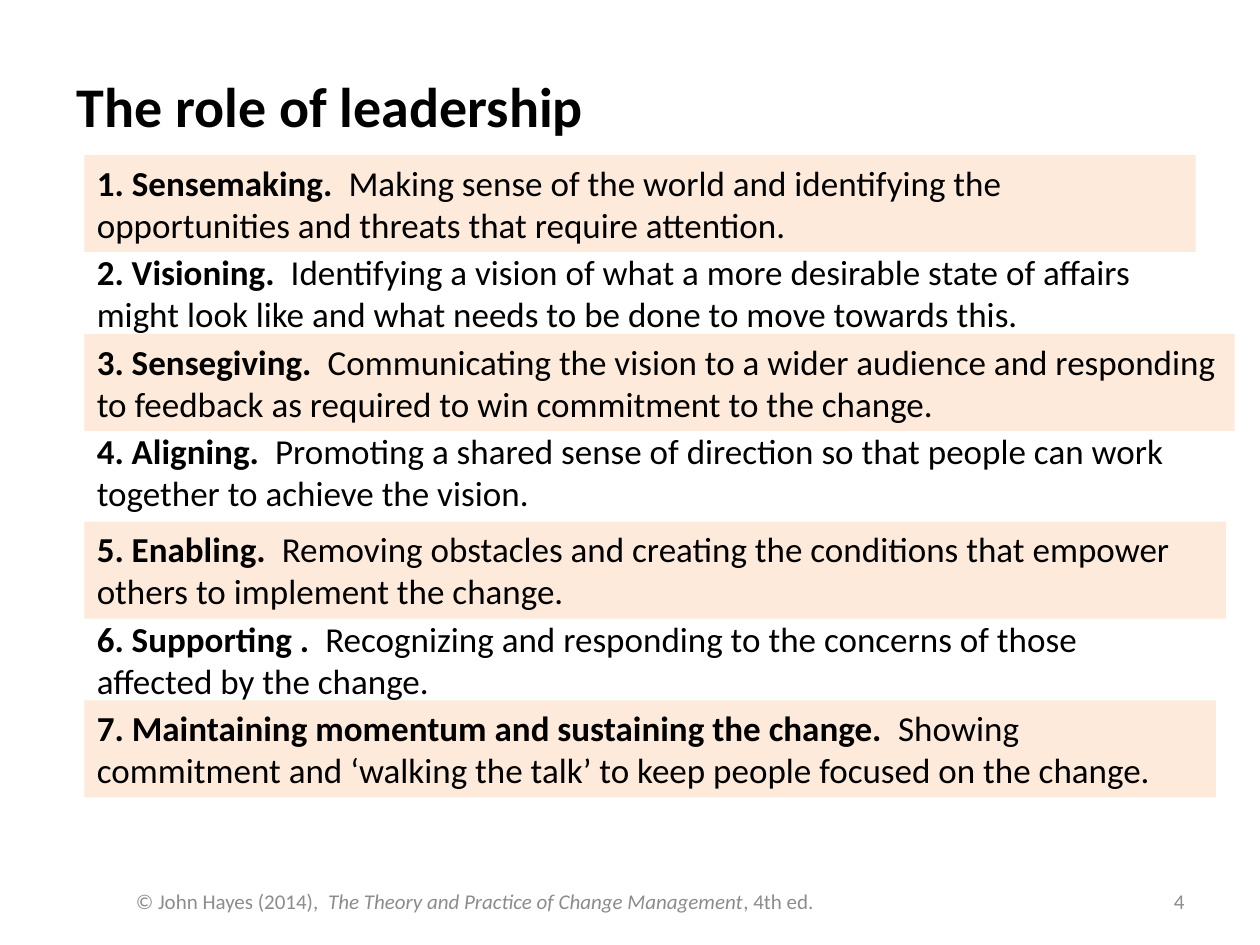
from dataclasses import dataclass

from pptx import Presentation
from pptx.dml.color import RGBColor as Rgb
from pptx.enum.text import MSO_ANCHOR as Anchor, MSO_AUTO_SIZE as AutoSize, PP_ALIGN as Align
from pptx.util import Inches, Pt


@dataclass(frozen=True)
class Theme:
    font: str = "Calibri"
    ink: Rgb = Rgb(0x00, 0x00, 0x00)
    muted: Rgb = Rgb(0x8C, 0x8C, 0x8C)
    band: Rgb = Rgb(0xFD, 0xEA, 0xDA)
    title_size: int = 32
    body_size: int = 20
    footer_size: int = 12


@dataclass(frozen=True)
class Area:
    left: float
    top: float
    width: float
    height: float

    def lengths(self) -> tuple:
        return tuple(Inches(n) for n in (self.left, self.top, self.width, self.height))


@dataclass(frozen=True)
class Span:
    text: str
    bold: bool = False
    italic: bool = False


@dataclass(frozen=True)
class Role:
    name: str
    summary: str
    width: float


THEME = Theme()
ROLE_LEFT, ROLE_TOP, ROLE_HEIGHT = 0.67, 1.23, 0.77
ROLE_STEP = 0.71
GROUP_SIZE, GROUP_GAP = 4, 0.07  # a little extra space after the fourth role
FOOTER_TOP, FOOTER_HEIGHT = 6.95, 0.4

ROLES = [
    Role("Sensemaking.", "Making sense of the world and identifying the opportunities "
         "and threats that require attention.", 8.82),
    Role("Visioning.", "Identifying a vision of what a more desirable state of affairs "
         "might look like and what needs to be done to move towards this.", 8.9),
    Role("Sensegiving.", "Communicating the vision to a wider audience and responding "
         "to feedback as required to win commitment to the change.", 9.13),
    Role("Aligning.", "Promoting a shared sense of direction so that people can work "
         "together to achieve the vision.", 9.06),
    Role("Enabling.", "Removing obstacles and creating the conditions that empower "
         "others to implement the change.", 9.06),
    Role("Supporting .", "Recognizing and responding to the concerns of those "
         "affected by the change.", 8.9),
    Role("Maintaining momentum and sustaining the change.", "Showing commitment and "
         "‘walking the talk’ to keep people focused on the change.", 8.98),
]


def set_attributes(target, values: dict) -> None:
    for name, value in values.items():
        setattr(target, name, value)


def write_text(box, spans: list[Span], size: int, color: Rgb,
               align: Align = Align.LEFT, anchor: Anchor = Anchor.TOP) -> None:
    frame = box.text_frame
    set_attributes(frame, {"word_wrap": True, "auto_size": AutoSize.NONE,
                           "vertical_anchor": anchor})
    para = frame.paragraphs[0]
    para.alignment = align
    for span in spans:
        run = para.add_run()
        run.text = span.text
        set_attributes(run.font, {"name": THEME.font, "size": Pt(size),
                                  "bold": span.bold, "italic": span.italic})
        run.font.color.rgb = color


def add_title(page, text: str) -> None:
    title = page.shapes.title
    left, top, width, height = Area(0.51, 0.52, 9.29, 0.64).lengths()
    set_attributes(title, {"left": left, "top": top, "width": width, "height": height})
    write_text(title, [Span(text, bold=True)], THEME.title_size, THEME.ink)


def add_role(page, index: int, role: Role) -> None:
    """Place one numbered role; every other one stands on a coloured band."""
    top = ROLE_TOP + index * ROLE_STEP + index // GROUP_SIZE * GROUP_GAP
    area = Area(ROLE_LEFT, top, role.width, ROLE_HEIGHT)
    box = page.shapes.add_textbox(*area.lengths())
    if index % 2 == 0:
        box.fill.solid()
        box.fill.fore_color.rgb = THEME.band
    spans = [Span(f"{index + 1}. {role.name}  ", bold=True), Span(role.summary)]
    write_text(box, spans, THEME.body_size, THEME.ink)


def add_footer(page, left: float, width: float, spans: list[Span], align: Align) -> None:
    area = Area(left, FOOTER_TOP, width, FOOTER_HEIGHT)
    box = page.shapes.add_textbox(*area.lengths())
    write_text(box, spans, THEME.footer_size, THEME.muted, align, Anchor.MIDDLE)


def main() -> None:
    deck = Presentation()
    set_attributes(deck, {"slide_width": Inches(10), "slide_height": Inches(7.5)})
    title_only = deck.slide_layouts.get_by_name("Title Only")
    page = deck.slides.add_slide(title_only)

    add_title(page, "The role of leadership")
    for index, role in enumerate(ROLES):
        add_role(page, index, role)
    citation = [Span("© John Hayes (2014),  "),
                Span("The Theory and Practice of Change Management", italic=True),
                Span(", 4th ed.")]
    add_footer(page, 0.98, 7.64, citation, Align.LEFT)
    add_footer(page, 7.17, 2.33, [Span("4")], Align.RIGHT)
    deck.save("out.pptx")


if __name__ == "__main__":
    main()
